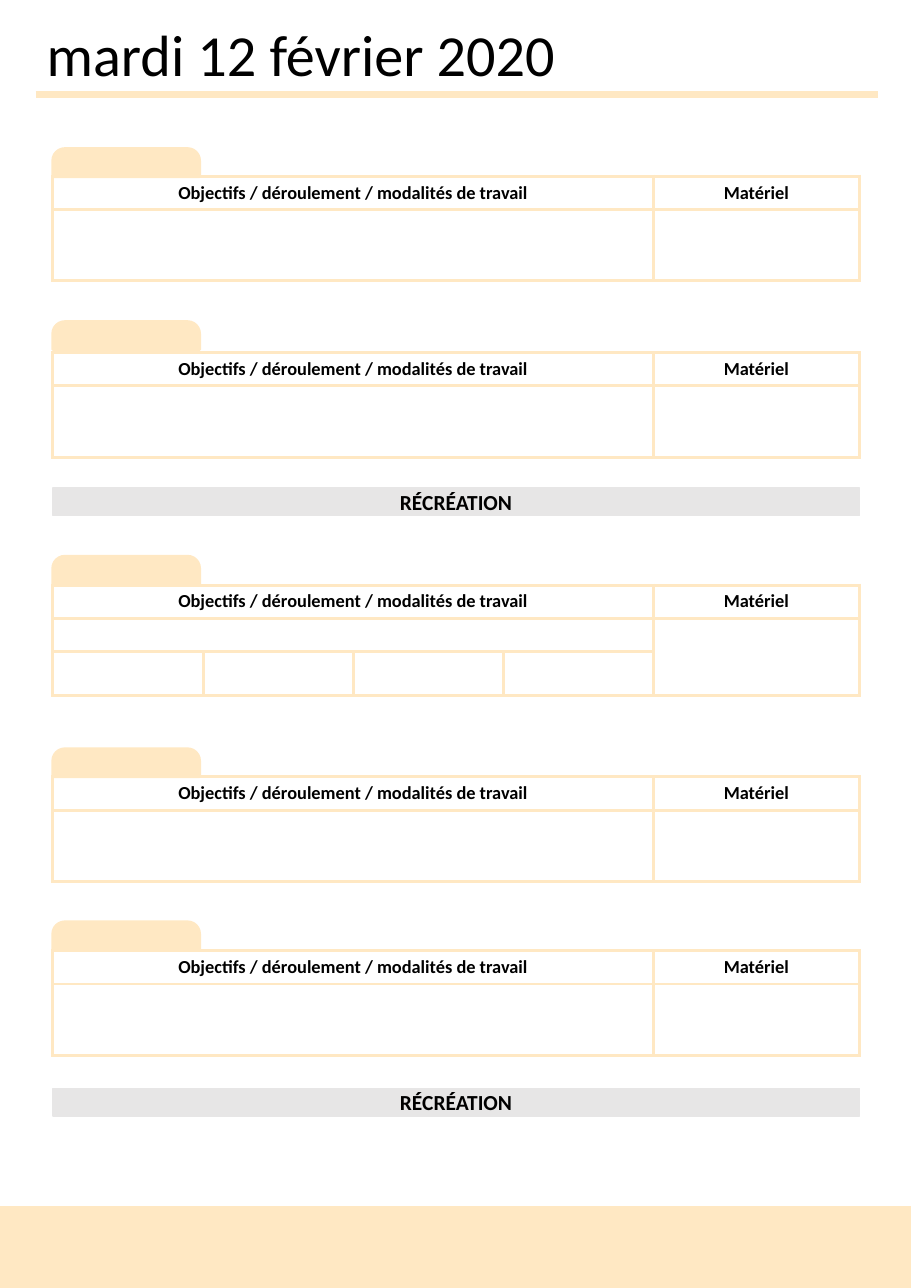
from lxml import etree
from pptx import Presentation
from pptx import util as u
from pptx.dml.color import RGBColor
from pptx.enum import shapes, text
from pptx.oxml.ns import qn

CREAM, GREY, WHITE, BLACK = "FFE8C3", "E7E6E6", "FFFFFF", "000000"
LEFT, WIDE, MAIN = 1.22, 18.59, 13.84
HEAD = 0.77


def paint(item, color):
    item.solid()
    item.fore_color.rgb = RGBColor.from_string(color)


class Planner:
    """Draws the parts of a daily class plan on one slide."""

    font = "Calibri"

    def __init__(self, slide):
        self.slide = slide

    def label(self, frame, words, size, bold=True, align=text.PP_ALIGN.CENTER):
        frame.text = words
        para = frame.paragraphs[0]
        para.alignment = align
        para.font.name, para.font.size, para.font.bold = self.font, u.Pt(size), bold
        paint(para.font.fill, BLACK)

    def title(self, words, left, top, width, height):
        box = self.slide.shapes.title
        box.left, box.top, box.width, box.height = map(u.Cm, (left, top, width, height))
        frame = box.text_frame
        frame.auto_size = text.MSO_AUTO_SIZE.NONE
        frame.vertical_anchor = text.MSO_ANCHOR.TOP
        self.label(frame, words, 38, False, text.PP_ALIGN.LEFT)

    def rule(self, left, right, top):
        line = self.slide.shapes.add_connector(
            shapes.MSO_CONNECTOR.STRAIGHT, *map(u.Cm, (left, top, right, top)))
        paint(line.line.fill, CREAM)
        line.line.width = u.Pt(4.75)
        etree.SubElement(line._element.spPr, qn("a:effectLst"))

    def block(self, kind, left, top, width, height, color, edge=1):
        shape = self.slide.shapes.add_shape(
            kind, *map(u.Cm, (left, top, width, height)))
        shape.shadow.inherit = False
        paint(shape.fill, color)
        paint(shape.line.fill, color)
        shape.line.width = u.Pt(edge)
        return shape

    def tab(self, top):
        kind = shapes.MSO_SHAPE.ROUND_2_SAME_RECTANGLE
        shape = self.block(kind, LEFT, top, 3.38, 0.64, CREAM, 2)
        shape.adjustments[0] = 0.43
        shape.adjustments[1] = 0

    def recess(self, top):
        bar = self.block(shapes.MSO_SHAPE.RECTANGLE, LEFT, top, WIDE, 0.64, GREY)
        bar.text_frame.vertical_anchor = text.MSO_ANCHOR.MIDDLE
        self.label(bar.text_frame, "RÉCRÉATION", 14)

    def border(self, cell):
        props = cell._tc.get_or_add_tcPr()
        for spot, side in enumerate(("lnL", "lnR", "lnT", "lnB")):
            edge = etree.Element(qn(f"a:{side}"), w=str(u.Pt(2.25)))
            fill = etree.SubElement(edge, qn("a:solidFill"))
            etree.SubElement(fill, qn("a:srgbClr"), val=CREAM)
            props.insert(spot, edge)

    def table(self, top, rows, parts=1):
        cols = [MAIN / parts] * parts + [WIDE - MAIN]
        grid = self.slide.shapes.add_table(
            len(rows), len(cols), *map(u.Cm, (LEFT, top, WIDE, sum(rows)))).table
        grid.first_row = grid.horz_banding = False
        for col, width in zip(grid.columns, cols):
            col.width = u.Cm(width)
        for row, height in zip(grid.rows, rows):
            row.height = u.Cm(height)
        for cell in grid.iter_cells():
            cell.margin_top = cell.margin_bottom = 0
            cell.vertical_anchor = text.MSO_ANCHOR.MIDDLE
            cell.text_frame.paragraphs[0].font.size = u.Pt(12)
            paint(cell.fill, WHITE)
            self.border(cell)
        if parts > 1:
            for row in (0, 1):
                grid.cell(row, 0).merge(grid.cell(row, parts - 1))
            grid.cell(1, parts).merge(grid.cell(2, parts))
        heads = {0: "Objectifs / déroulement / modalités de travail", parts: "Matériel"}
        for col, words in heads.items():
            self.label(grid.cell(0, col).text_frame, words, 12)


def main():
    deck = Presentation()
    deck.slide_width, deck.slide_height = u.Cm(21), u.Cm(29.7)
    plan = Planner(deck.slides.add_slide(deck.slide_layouts[5]))
    plan.title("mardi 12 février 2020", 0.82, 0.3, 15.9, 1.88)
    plan.rule(0.82, 20.25, 2.18)
    plain, split = (HEAD, 1.64), (HEAD, HEAD, 1)
    lessons = [(3.43, 4.06, plain, 1), (7.42, 8.13, plain, 1),
               (12.83, 13.49, split, 4), (17.27, 17.91, plain, 1),
               (21.26, 21.92, plain, 1)]
    for tab, top, rows, parts in lessons:
        plan.table(top, rows, parts)
        plan.tab(tab)
    for top in (11.25, 25.1):
        plan.recess(top)
    plan.block(shapes.MSO_SHAPE.RECTANGLE, 0, 27.82, 21, 1.88, CREAM)
    deck.save("out.pptx")


if __name__ == "__main__":
    main()
